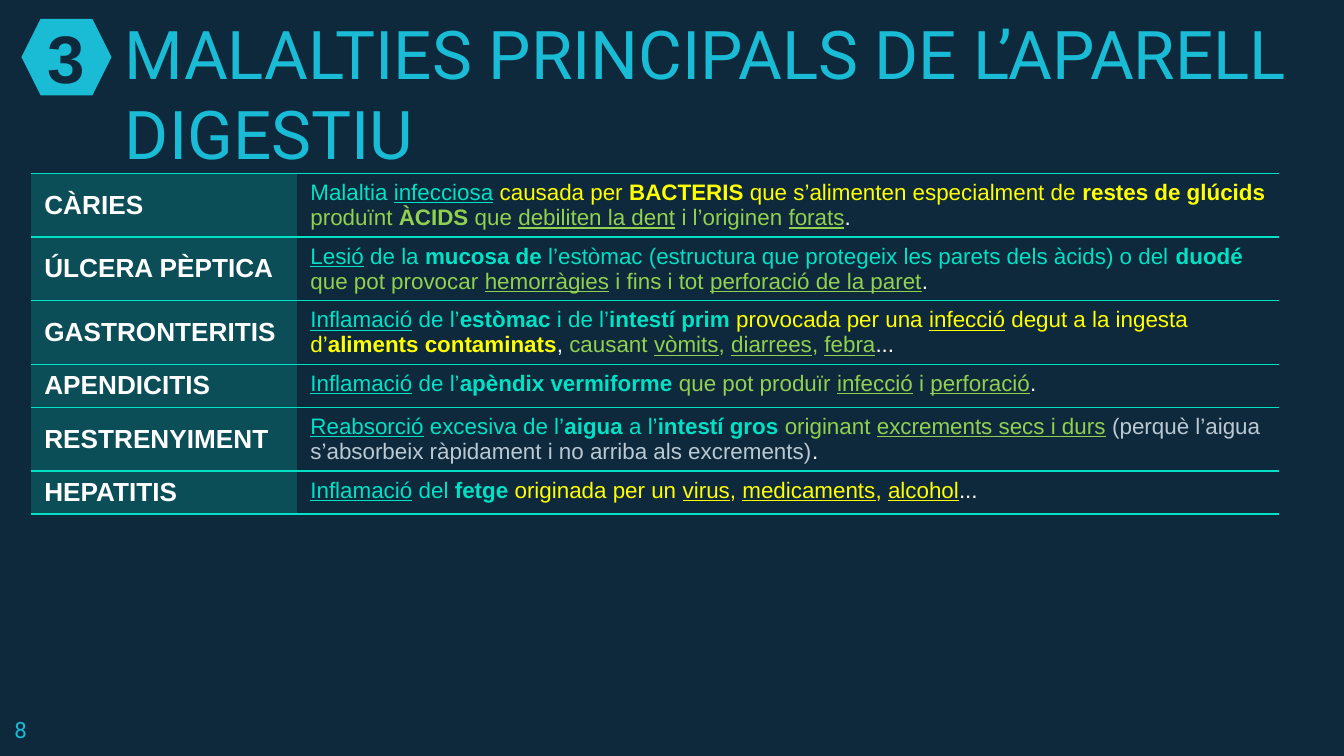
from lxml import etree
from pptx import Presentation
from pptx.dml.color import RGBColor
from pptx.enum.shapes import MSO_SHAPE
from pptx.enum.text import MSO_ANCHOR, MSO_AUTO_SIZE, PP_ALIGN
from pptx.oxml.ns import qn
from pptx.util import Inches, Pt

HEXAGON = MSO_SHAPE.HEXAGON
TOP, MIDDLE, BOTTOM = MSO_ANCHOR.TOP, MSO_ANCHOR.MIDDLE, MSO_ANCHOR.BOTTOM
LEFT, CENTER = PP_ALIGN.LEFT, PP_ALIGN.CENTER
NO_AUTOFIT = MSO_AUTO_SIZE.NONE

SLIDE_WIDTH = Inches(10)
SLIDE_HEIGHT = SLIDE_WIDTH * 9 // 16

NAVY, CYAN, PETROL = "0E293C", "19BBD5", "0B4E58"
TEAL, YELLOW, GREEN, WHITE, GREY = "00E1C6", "FFFF00", "92D050", "FFFFFF", "BBC9D3"

COLUMN_WIDTHS = (1.98, 7.31)
LINE_HEIGHTS = {1: 0.32, 2: 0.47}

DISEASES = [
    ("CÀRIES", 2, [
        (TEAL, ["Malaltia ", "_infecciosa", " "]),
        (YELLOW, ["causada per ", "*BACTERIS", " que s’alimenten especialment de ", "*restes de glúcids "]),
        (GREEN, ["produïnt ", "*ÀCIDS", " que ", "_debiliten la dent", " i l’originen ", "_forats"]),
        (WHITE, ["."]),
    ]),
    ("ÚLCERA PÈPTICA", 2, [
        (TEAL, ["_Lesió", " de la ", "*mucosa de ",
                "l’estòmac (estructura que protegeix les parets dels àcids) o del ", "*duodé "]),
        (GREEN, ["que pot provocar ", "_hemorràgies", " i fins i tot ", "_perforació de la paret"]),
        (WHITE, ["."]),
    ]),
    ("GASTRONTERITIS", 2, [
        (TEAL, ["_Inflamació", " de l’", "*estòmac", " i de l’", "*intestí prim "]),
        (YELLOW, ["provocada per una ", "_infecció", " degut a la ingesta d’", "*aliments contaminats"]),
        (WHITE, [", "]),
        (GREEN, ["causant ", "_vòmits", ", ", "_diarrees", ", ", "_febra"]),
        (WHITE, ["..."]),
    ]),
    ("APENDICITIS", 1, [
        (TEAL, ["_Inflamació", " de l’", "*apèndix vermiforme "]),
        (GREEN, ["que pot produïr ", "_infecció", " i ", "_perforació"]),
        (WHITE, ["."]),
    ]),
    ("RESTRENYIMENT", 2, [
        (TEAL, ["_Reabsorció", " excesiva de l’", "*aigua", " a l’", "*intestí gros "]),
        (GREEN, ["originant ", "_excrements secs i durs"]),
        (WHITE, [" "]),
        (GREY, ["(perquè l’aigua s’absorbeix ràpidament i no arriba als excrements)"]),
        (WHITE, ["."]),
    ]),
    ("HEPATITIS", 1, [
        (TEAL, ["_Inflamació", " del ", "*fetge "]),
        (YELLOW, ["originada per un ", "_virus", ", ", "_medicaments", ", ", "_alcohol"]),
        (WHITE, ["..."]),
    ]),
]


def paint(fill, color):
    fill.solid()
    fill.fore_color.rgb = RGBColor.from_string(color)


def add_run(paragraph, text, size, color, font="Arial", bold=False, underline=False):
    run = paragraph.add_run()
    run.text = text
    run.font.name = font
    run.font.size = Pt(size)
    run.font.bold = bold
    run.font.underline = underline
    run.font.color.rgb = RGBColor.from_string(color)


def format_frame(frame, anchor, alignment, inset):
    frame.word_wrap = True
    frame.auto_size = NO_AUTOFIT
    frame.vertical_anchor = anchor
    frame.margin_left = frame.margin_right = Inches(inset)
    frame.margin_top = frame.margin_bottom = Inches(inset)
    paragraph = frame.paragraphs[0]
    paragraph.alignment = alignment
    return paragraph


def fill_title(slide, text):
    title = slide.shapes.title
    title.left, title.top = Inches(0.83), Inches(0)
    title.width, title.height = Inches(9.34), Inches(1.39)
    paragraph = format_frame(title.text_frame, BOTTOM, LEFT, 0.1)
    paragraph.line_spacing = 1.0
    paragraph.space_before = Pt(0)
    add_run(paragraph, text, 36, CYAN, font="Roboto")


def add_page_number(slide, text):
    box = slide.shapes.add_textbox(Inches(0.01), Inches(5.23), Inches(0.6), Inches(0.39))
    paragraph = format_frame(box.text_frame, TOP, LEFT, 0.1)
    add_run(paragraph, text, 12, CYAN, font="Roboto")


def add_section_badge(slide, text):
    badge = slide.shapes.add_shape(
        HEXAGON, Inches(0.16), Inches(0.14), Inches(0.67), Inches(0.57)
    )
    badge.shadow.inherit = False
    paint(badge.fill, CYAN)
    badge.line.fill.background()
    paragraph = format_frame(badge.text_frame, MIDDLE, CENTER, 0)
    add_run(paragraph, text, 36, NAVY, bold=True)


def add_border(cell, side, color=None):
    properties = cell._tc.get_or_add_tcPr()
    line = etree.SubElement(properties, qn(f"a:ln{side}"), w=str(Pt(1)))
    if color is None:
        etree.SubElement(line, qn("a:noFill"))
    else:
        fill = etree.SubElement(line, qn("a:solidFill"))
        etree.SubElement(fill, qn("a:srgbClr"), val=color)


def format_cell(cell, color, anchor):
    for side, border in (("L", None), ("R", None), ("T", TEAL), ("B", TEAL)):
        add_border(cell, side, border)
    paint(cell.fill, color)
    cell.vertical_anchor = anchor
    return cell.text_frame.paragraphs[0]


def add_description(paragraph, segments):
    for color, pieces in segments:
        for piece in pieces:
            bold, underline = piece.startswith("*"), piece.startswith("_")
            add_run(paragraph, piece.lstrip("*_"), 12, color, bold=bold, underline=underline)


def add_disease_table(slide):
    heights = [LINE_HEIGHTS[lines] for _, lines, _ in DISEASES]
    frame = slide.shapes.add_table(
        len(DISEASES), len(COLUMN_WIDTHS), Inches(0.23), Inches(1.29),
        Inches(sum(COLUMN_WIDTHS)), Inches(sum(heights)),
    )
    table = frame.table
    table.first_row = table.horz_banding = False
    for column, width in zip(table.columns, COLUMN_WIDTHS):
        column.width = Inches(width)
    for row, height, (name, _, segments) in zip(table.rows, heights, DISEASES):
        row.height = Inches(height)
        name_cell, description_cell = row.cells
        add_run(format_cell(name_cell, PETROL, MIDDLE), name, 14, WHITE, bold=True)
        add_description(format_cell(description_cell, NAVY, TOP), segments)


def main():
    presentation = Presentation()
    presentation.slide_width, presentation.slide_height = SLIDE_WIDTH, SLIDE_HEIGHT
    slide = presentation.slides.add_slide(presentation.slide_layouts.get_by_name("Title Only"))
    paint(slide.background.fill, NAVY)
    fill_title(slide, "MALALTIES PRINCIPALS DE L’APARELL DIGESTIU")
    add_page_number(slide, "8")
    add_section_badge(slide, "3")
    add_disease_table(slide)
    presentation.save("out.pptx")


if __name__ == "__main__":
    main()
